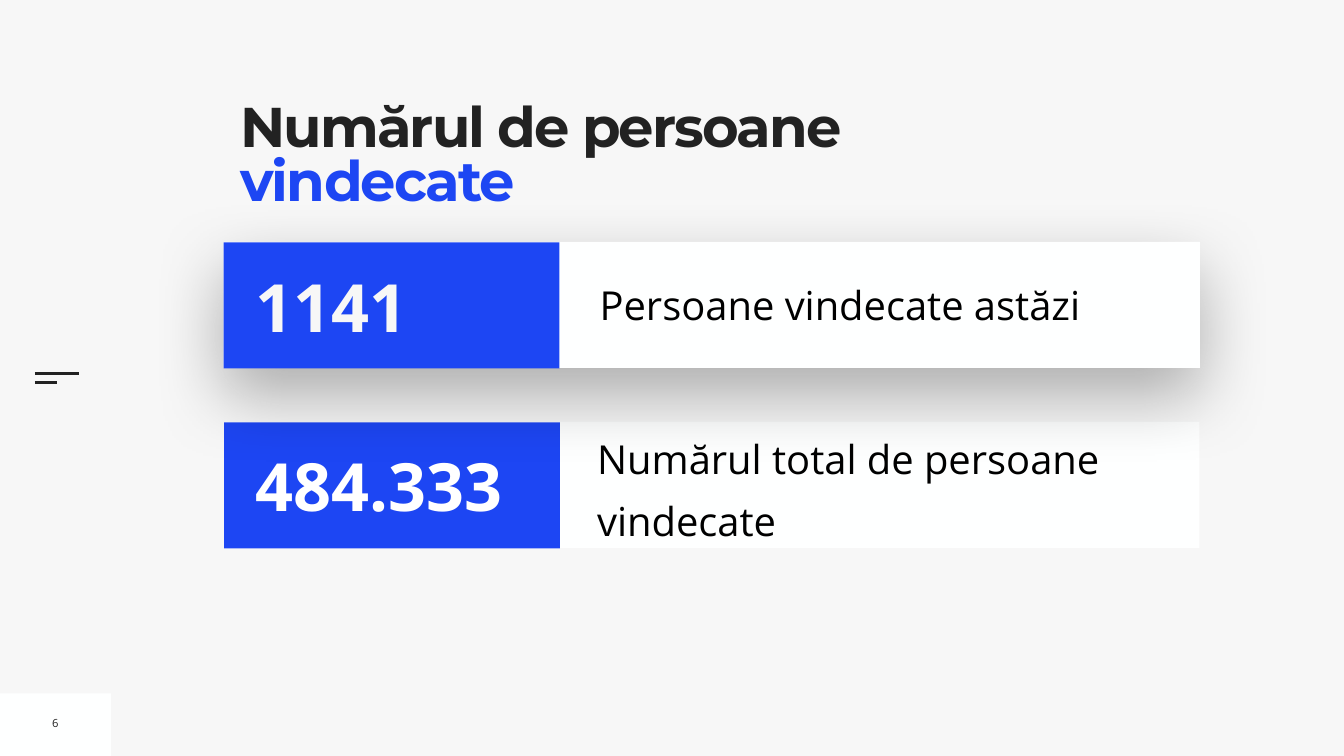
from pptx import Presentation
from pptx.dml.color import RGBColor
from pptx.enum.shapes import MSO_CONNECTOR, MSO_SHAPE
from pptx.enum.text import MSO_ANCHOR, PP_ALIGN
from pptx.oxml import parse_xml
from pptx.oxml.ns import nsdecls
from pptx.util import Inches, Pt

BACKGROUND = RGBColor(0xF7, 0xF7, 0xF7)
WHITE = RGBColor(0xFE, 0xFF, 0xFF)
PURE_WHITE = RGBColor(0xFF, 0xFF, 0xFF)
BLUE = RGBColor(0x1D, 0x46, 0xF3)
DARK = RGBColor(0x22, 0x22, 0x22)
BLACK = RGBColor(0, 0, 0)

HEADING_FONT = "Montserrat"
BODY_FONT = "Open Sans"


def add_effects(shape, content=""):
    """Set the effect list of a shape; an empty one removes the shadow."""
    shape._element.spPr.append(
        parse_xml(f"<a:effectLst {nsdecls('a')}>{content}</a:effectLst>"))


def add_block(page, left, top, width, height, color):
    block = page.shapes.add_shape(
        MSO_SHAPE.RECTANGLE, Inches(left), Inches(top), Inches(width), Inches(height))
    block.shadow.inherit = False
    block.fill.solid()
    block.fill.fore_color.rgb = color
    block.line.fill.background()
    return block


def add_text(page, left, top, width, height, spans, size, font=BODY_FONT, bold=False,
             inset=0.1, wrap=True, anchor=MSO_ANCHOR.MIDDLE, spacing=None, **para_format):
    """Add one paragraph made of (wording, colour) spans."""
    box = page.shapes.add_textbox(
        Inches(left), Inches(top), Inches(width), Inches(height))
    frame = box.text_frame
    frame_format = {"word_wrap": wrap, "vertical_anchor": anchor}
    for side in ("left", "top", "right", "bottom"):
        frame_format[f"margin_{side}"] = Inches(inset)
    for name, value in frame_format.items():
        setattr(frame, name, value)
    para = frame.paragraphs[0]
    for name, value in para_format.items():
        setattr(para, name, value)
    for wording, color in spans:
        span = para.add_run()
        span.text = wording
        for name, value in {"name": font, "size": Pt(size), "bold": bold}.items():
            setattr(span.font, name, value)
        span.font.color.rgb = color
        if spacing is not None:
            span._r.get_or_add_rPr().set("spc", str(int(spacing * 100)))


def add_margin(page, left, top):
    """Menu mark and page number in the left margin."""
    add_block(page, 0, 13.76, 2.2, 1.24, WHITE)
    for offset, length in ((0, 0.88), (0.18, 0.44)):
        y = Inches(top + offset)
        line = page.shapes.add_connector(
            MSO_CONNECTOR.STRAIGHT, Inches(left), y, Inches(left + length), y)
        line.line.color.rgb = DARK
        line.line.width = Pt(3)
        add_effects(line)
    add_text(page, 0.93, 14.09, 0.34, 0.51, [("6", DARK)], 16,
             wrap=False, alignment=PP_ALIGN.CENTER)


def add_title(page, left, top, width, height):
    add_text(page, left, top, width, height,
             [("Numărul de persoane ", DARK), ("vindecate", BLUE)], 80,
             font=HEADING_FONT, bold=True, inset=0, anchor=MSO_ANCHOR.TOP,
             spacing=-2.7, line_spacing=0.8)


def add_card(page, left, top, width, height, number, number_color, label,
             label_box, raised=False, **label_format):
    """White card with a blue number panel; label_box is relative to the card."""
    card = add_block(page, left, top, width, height, WHITE)
    if raised:
        card._element.spPr.remove(card._element.spPr.find(
            "{http://schemas.openxmlformats.org/drawingml/2006/main}effectLst"))
        add_effects(card, f'<a:outerShdw blurRad="{Pt(100)}" dist="{Pt(40)}" '
                          'dir="5400000" rotWithShape="0"><a:srgbClr val="000000">'
                          '<a:alpha val="30000"/></a:srgbClr></a:outerShdw>')
    x, y, label_width, label_height = label_box
    add_text(page, left + x, top + y, label_width, label_height,
             [(label, BLACK)], 57, **label_format)
    add_block(page, left, top + 0.01, 6.66, height, BLUE)
    add_text(page, left + 0.53, top + 0.36, 6.03, 1.8,
             [(number, number_color)], 95, bold=True)


def main():
    deck = Presentation()
    deck.slide_width, deck.slide_height = Inches(26.67), Inches(15)
    page = deck.slides.add_slide(deck.slide_layouts[6])
    page.background.fill.solid()
    page.background.fill.fore_color.rgb = BACKGROUND

    add_margin(page, 0.69, 7.41)
    add_title(page, 4.77, 2.07, 13.01, 2.73)

    # The total goes first, so that the raised card casts its shadow on it
    add_card(page, 4.45, 8.37, 19.35, 2.5, "484.333", PURE_WHITE,
             "Numărul total de persoane vindecate", (7.4, 0.02, 11.95, 2.36),
             inset=0, line_spacing=1.3, space_before=Pt(20))
    add_card(page, 4.44, 4.8, 19.37, 2.5, "1141", BACKGROUND,
             "Persoane vindecate astăzi", (7.36, 0.67, 11.76, 1.16), raised=True)

    deck.save("out.pptx")


if __name__ == "__main__":
    main()
